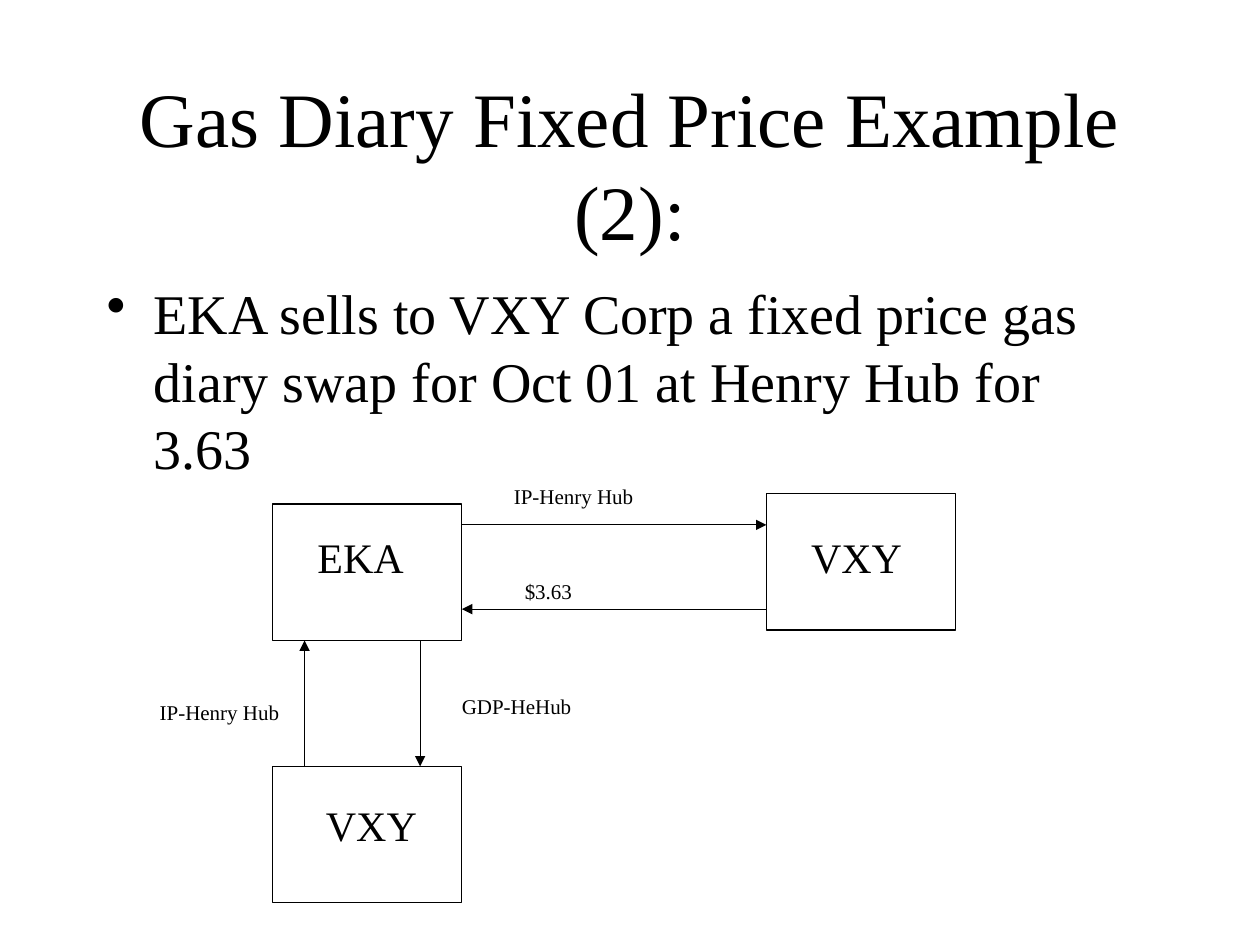
from lxml import etree
from pptx import Presentation
from pptx.dml.color import RGBColor
from pptx.enum.shapes import MSO_CONNECTOR, MSO_SHAPE
from pptx.enum.text import MSO_ANCHOR, MSO_AUTO_SIZE, PP_ALIGN
from pptx.oxml.ns import qn
from pptx.util import Cm, Pt

RECT, LINE = MSO_SHAPE.RECTANGLE, MSO_CONNECTOR.STRAIGHT
CENTER, MIDDLE = PP_ALIGN.CENTER, MSO_ANCHOR.MIDDLE
NOFIT, GROW = MSO_AUTO_SIZE.NONE, MSO_AUTO_SIZE.SHAPE_TO_FIT_TEXT
FONT = "Times New Roman"
COLORS = {"ink": "000000"}

# Content, lengths in cm
TITLE = "Gas Diary Fixed Price Example (2):"
POINT = "EKA sells to VXY Corp a fixed price gas diary swap for Oct 01 at Henry Hub for 3.63"
BOX_W, BOX_H = 3.81, 2.75
BOXES = {"seller": (5.5, 10.16), "buyer": (15.45, 9.95), "hedge": (5.5, 15.45)}
NAMES = [  # text, left, top, width
    ("EKA", 6.15, 10.58, 2.24),
    ("VXY", 6.32, 16.0, 2.34),
    ("VXY", 16.1, 10.58, 2.34),
]
LABELS = [
    ("$3.63", 10.33, 11.53, 1.6),
    ("IP-Henry Hub", 10.11, 9.63, 3.0),
    ("GDP-HeHub", 9.06, 13.86, 2.8),
    ("IP-Henry Hub", 2.97, 13.97, 3.0),
]

# Arrows run between the facing sides of the boxes
left, top = BOXES["seller"]
east, south = left + BOX_W, top + BOX_H
west, north = BOXES["buyer"][0], BOXES["hedge"][1]
ARROWS = [
    (east, 10.58, west, 10.58),
    (west, 12.28, east, 12.28),
    (8.47, south, 8.47, north),
    (6.14, north, 6.14, south),
]


def ink():
    return RGBColor.from_string(COLORS["ink"])


def write(frame, text, size):
    frame.text = text
    para = frame.paragraphs[0]
    para.font.name, para.font.size = FONT, Pt(size)
    para.font.color.rgb = ink()
    return para


def add_text(text, x, y, w, h, size, wrap=False):
    box = slide.shapes.add_textbox(Cm(x), Cm(y), Cm(w), Cm(h))
    frame = box.text_frame
    frame.word_wrap = wrap
    frame.auto_size = NOFIT if wrap else GROW
    return write(frame, text, size)


def add_arrow(*ends):
    line = slide.shapes.add_connector(LINE, *map(Cm, ends))
    line.line.color.rgb = ink()
    line.line.width = Pt(0.75)
    tail = etree.SubElement(line.line._get_or_add_ln(), qn("a:tailEnd"))
    tail.set("type", "triangle")
    etree.SubElement(line._element.spPr, qn("a:effectLst"))


deck = Presentation()
deck.slide_width, deck.slide_height = Cm(25.4), Cm(19.05)
slide = deck.slides.add_slide(deck.slide_layouts[5])

# Title
title = slide.shapes.title
title.left, title.top, title.width, title.height = map(Cm, (1.9, 1.7, 21.6, 3.18))
title.text_frame.auto_size = NOFIT
title.text_frame.vertical_anchor = MIDDLE
write(title.text_frame, TITLE, 44).alignment = CENTER

# Bullet point
point = add_text(POINT, 1.9, 5.5, 21.6, 11.43, 32, wrap=True)
point.space_before = Pt(8)
props = point._p.get_or_add_pPr()
props.set("marL", str(Cm(0.95)))
props.set("indent", str(Cm(-0.95)))
bullet = etree.Element(qn("a:buChar"), char="•")
props.find(qn("a:spcBef")).addnext(bullet)

# Boxes
for x, y in BOXES.values():
    box = slide.shapes.add_shape(RECT, Cm(x), Cm(y), Cm(BOX_W), Cm(BOX_H))
    box.shadow.inherit = False
    box.fill.background()
    box.line.color.rgb = ink()
    box.line.width = Pt(0.75)

# Arrows
for ends in ARROWS:
    add_arrow(*ends)

# Names and labels
for text, x, y, w in NAMES:
    add_text(text, x, y, w, 1.27, 24)
for text, x, y, w in LABELS:
    add_text(text, x, y, w, 0.76, 12)

deck.save("out.pptx")
